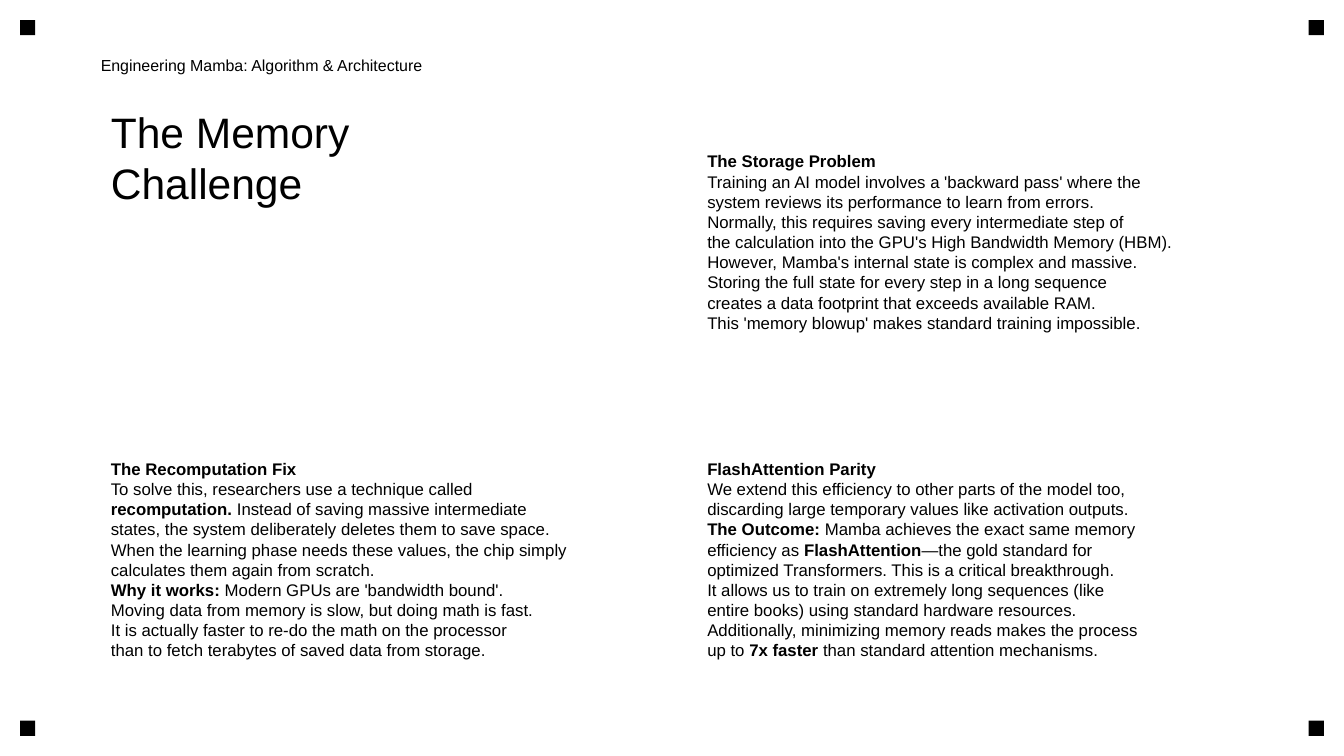
from pptx import Presentation
from pptx.dml.color import RGBColor
from pptx.enum.shapes import MSO_SHAPE
from pptx.enum.text import MSO_ANCHOR, MSO_AUTO_SIZE, PP_ALIGN
from pptx.util import Pt
from lxml import etree

RECT = MSO_SHAPE.RECTANGLE
TOP, MIDDLE = MSO_ANCHOR.TOP, MSO_ANCHOR.MIDDLE
NO_FIT = MSO_AUTO_SIZE.NONE
LEFT = PP_ALIGN.LEFT
BLACK = RGBColor(0, 0, 0)
WHITE = RGBColor(255, 255, 255)
A = "http://schemas.openxmlformats.org/drawingml/2006/main"

# Content: one string per line, with ** around bold words
HEADER = ["Engineering Mamba: Algorithm & Architecture"]
TITLE = ["The Memory", "Challenge"]
STORAGE = [
    "**The Storage Problem**",
    "Training an AI model involves a 'backward pass' where the",
    "system reviews its performance to learn from errors.",
    "Normally, this requires saving every intermediate step of",
    "the calculation into the GPU's High Bandwidth Memory (HBM).",
    "However, Mamba's internal state is complex and massive.",
    "Storing the full state for every step in a long sequence",
    "creates a data footprint that exceeds available RAM.",
    "This 'memory blowup' makes standard training impossible.",
]
RECOMPUTATION = [
    "**The Recomputation Fix**",
    "To solve this, researchers use a technique called",
    "**recomputation.** Instead of saving massive intermediate",
    "states, the system deliberately deletes them to save space.",
    "When the learning phase needs these values, the chip simply",
    "calculates them again from scratch.",
    "**Why it works:** Modern GPUs are 'bandwidth bound'.",
    "Moving data from memory is slow, but doing math is fast.",
    "It is actually faster to re-do the math on the processor",
    "than to fetch terabytes of saved data from storage.",
]
PARITY = [
    "**FlashAttention Parity**",
    "We extend this efficiency to other parts of the model too,",
    "discarding large temporary values like activation outputs.",
    "**The Outcome:** Mamba achieves the exact same memory",
    "efficiency as **FlashAttention**—the gold standard for",
    "optimized Transformers. This is a critical breakthrough.",
    "It allows us to train on extremely long sequences (like",
    "entire books) using standard hardware resources.",
    "Additionally, minimizing memory reads makes the process",
    "up to **7x faster** than standard attention mechanisms.",
]

# Geometry in points
SLIDE_W, SLIDE_H = 960, 540
MARK, MARK_GAP = 10.8, 14.4
MARGIN, BOTTOM_MARGIN = 72, 36
GAP = 21.6
CELL_W = 390
CELL_H = (SLIDE_H - MARGIN - BOTTOM_MARGIN - GAP) / 2
COL_X = [MARGIN, SLIDE_W - MARGIN - CELL_W]
ROW_Y = [MARGIN, MARGIN + CELL_H + GAP]
CELL_INSETS = (7.2, 3.6, 3.6, 7.2)


def place(sp, x, y, w, h):
    sp.left, sp.top, sp.width, sp.height = Pt(x), Pt(y), Pt(w), Pt(h)


def write(sp, lines, size, anchor, insets):
    tf = sp.text_frame
    frame = {"word_wrap": True, "auto_size": NO_FIT, "vertical_anchor": anchor}
    for name, value in frame.items():
        setattr(tf, name, value)
    for side, inset in zip(("left", "top", "right", "bottom"), insets):
        setattr(tf, "margin_" + side, Pt(inset))
    for i, line in enumerate(lines):
        p = tf.paragraphs[0] if i == 0 else tf.add_paragraph()
        pPr = p._p.get_or_add_pPr()
        pPr.set("marL", "0")
        pPr.set("indent", "0")
        etree.SubElement(pPr, f"{{{A}}}buNone")
        p.alignment = LEFT
        p.line_spacing = 1.0
        p.space_before = p.space_after = Pt(0)
        for j, part in enumerate(line.split("**")):
            if not part:
                continue
            r = p.add_run()
            r.text = part
            style = {"name": "Arial", "size": Pt(size), "bold": j % 2 == 1}
            for name, value in style.items():
                setattr(r.font, name, value)
            r.font.color.rgb = BLACK


prs = Presentation()
prs.slide_width, prs.slide_height = Pt(SLIDE_W), Pt(SLIDE_H)
s = prs.slides.add_slide(prs.slide_layouts[4])
s.background.fill.solid()
s.background.fill.fore_color.rgb = WHITE

# Corner marks
for y in (MARK_GAP, SLIDE_H - MARK_GAP - MARK):
    for x in (MARK_GAP, SLIDE_W - MARK_GAP - MARK):
        sp = s.shapes.add_shape(RECT, Pt(x), Pt(y), Pt(MARK), Pt(MARK))
        sp.shadow.inherit = False
        sp.fill.solid()
        sp.fill.fore_color.rgb = BLACK
        sp.line.fill.background()

# Two by two grid: title and three text blocks
cells = [(TITLE, 30.4, TOP), (STORAGE, 12, MIDDLE),
         (RECOMPUTATION, 12, MIDDLE), (PARITY, 12, MIDDLE)]
holders = {sp.placeholder_format.idx: sp for sp in s.placeholders}
for i, (lines, size, anchor) in enumerate(cells):
    place(holders[i], COL_X[i % 2], ROW_Y[i // 2], CELL_W, CELL_H)
    write(holders[i], lines, size, anchor, CELL_INSETS)

# The layout's fifth placeholder is not needed
spare = holders[4]._element
spare.getparent().remove(spare)

# Running header
sp = s.shapes.add_textbox(Pt(MARGIN), Pt(28.8), Pt(432), Pt(36))
write(sp, HEADER, 11.4, MIDDLE, (0, 0, 0, 0))

prs.save("out.pptx")
